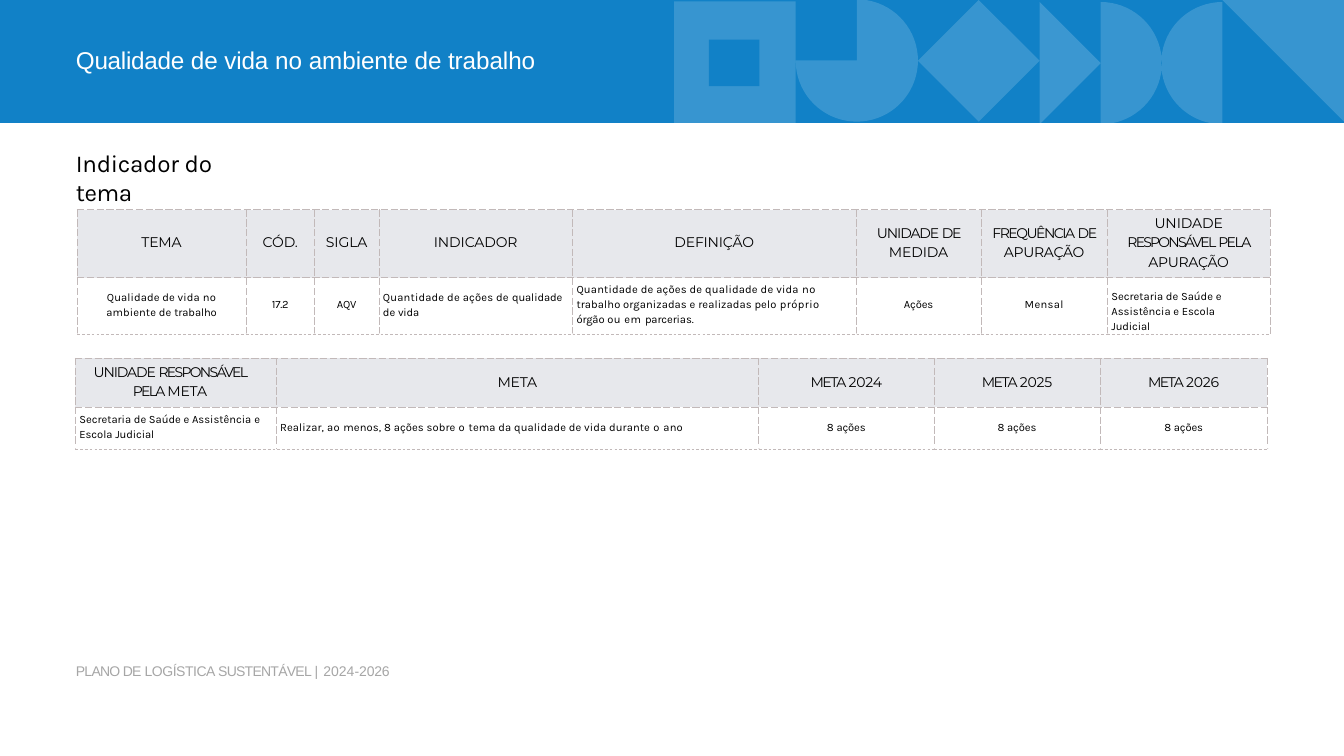
import math
from dataclasses import dataclass
from itertools import accumulate

from lxml import etree
from pptx import Presentation
from pptx.dml.color import RGBColor
from pptx.enum import dml, shapes, text
from pptx.oxml import ns
from pptx.util import Inches, Pt


@dataclass(frozen=True)
class Theme:
    blue: str = "1181C7"
    white: str = "FFFFFF"
    black: str = "000000"
    gray: str = "A6A6A6"
    header: str = "E7E8EC"
    border: str = "C2B9B9"
    title_size: int = 26
    label_size: int = 15
    body_size: int = 12
    title_font: str = "Arial"
    header_font: str = "Montserrat"
    body_font: str = "Karla"


T = Theme()
LEFT, CENTER = text.PP_ALIGN.LEFT, text.PP_ALIGN.CENTER


@dataclass(frozen=True)
class Cell:
    """Runs are (text, letter spacing in points); insets are inches."""
    runs: list
    align: int = CENTER
    left: float = 0
    right: float = 0
    top: float = 0
    bottom: float = 0.05


INDICATOR_COLS = [2.51, 1.02, 0.96, 2.88, 4.22, 1.86, 1.88, 2.42]
INDICATOR_ROWS = [
    [Cell([("TEMA", -0.2)]),
     Cell([("CÓD.", -0.2)]),
     Cell([("SIGLA", -0.1)]),
     Cell([("INDICADOR", -0.1)]),
     Cell([("DEFINIÇÃO", -0.2)]),
     Cell([("UNIDADE ", -1.2), ("DE ", -1.4), ("MEDIDA", -0.1)]),
     Cell([("FREQUÊNCIA ", -1.6), ("DE ", -1.3), ("APURAÇÃO", -0.3)]),
     Cell([("UNIDADE ", -0.1), ("RESPONSÁVEL ", -1.9), ("PELA ", -1.6),
           ("APURAÇÃO", -0.3)], left=0.1, right=0.1)],
    [Cell([("Qualidade de vida ", 0.1), ("no ", 0.3), ("ambiente de ", 0.1),
           ("trabalho", -0.1)], left=0.3, right=0.3),
     Cell([("17.2", -0.2)]),
     Cell([("AQV", -0.2)]),
     Cell([("Quantidade de ações de ", 0.2), ("qualidade ", -0.1), ("de ", 0),
           ("vida", -0.2)], LEFT, left=0.06),
     Cell([("Quantidade de ações de qualidade de vida ", 0.2), ("no ", 0.3),
           ("trabalho organizadas e realizadas pelo ", 0.1), ("próprio ", 0.5),
           ("órgão ", -0.1), ("ou em ", 0.6), ("parcerias.", -0.1)],
          LEFT, left=0.06, right=0.2),
     Cell([("Ações", -0.1)]),
     Cell([("Mensal", 0.4)]),
     Cell([("Secretaria de Saúde ", 0), ("e ", -0.5),
           ("Assistência e Escola ", 0), ("Judicial", -0.1)],
          LEFT, left=0.06, right=0.3, top=0.16, bottom=0)],
]

YEARS = ["2024", "2025", "2026"]
TARGET_COLS = [2.99, 7.18, 2.61, 2.47, 2.49]
TARGET_ROWS = [
    [Cell([("UNIDADE ", -1.2), ("RESPONSÁVEL PELA ", -1.8), ("META", -0.2)],
          left=0.2, right=0.37),
     Cell([("META", -0.2)])]
    + [Cell([("META ", -1.6), (year, -0.2)]) for year in YEARS],
    [Cell([("Secretaria de Saúde e Assistência ", 0), ("e ", -0.5),
           ("Escola ", 0), ("Judicial", -0.1)], LEFT, left=0.06, right=0.2,
          bottom=0),
     Cell([("Realizar, ", 0.1), ("ao ", 0.5), ("menos, 8 ações sobre ", 0.1),
           ("o ", 0.7), ("tema da qualidade de vida durante ", 0.1),
           ("o ", 0.7), ("ano", 0.2)], LEFT, left=0.06, bottom=0)]
    + [Cell([("8 ", 0), ("ações", -0.1)], bottom=0) for _ in YEARS],
]


def add_runs(p, runs, font, size, color):
    for words, spacing in runs:
        r = p.add_run()
        r.text = words
        r.font.name, r.font.size = font, Pt(size)
        r.font.color.rgb = RGBColor.from_string(color)
        r_pr = r._r.get_or_add_rPr()
        r_pr.set("spc", str(round(spacing * 100)))
        r_pr.set("kern", "0")


def paint(sp, color, alpha=None):
    """Fill a shape without line or shadow; alpha is opacity in percent."""
    sp.shadow.inherit = False
    sp.line.fill.background()
    sp.fill.solid()
    sp.fill.fore_color.rgb = RGBColor.from_string(color)
    if alpha:
        clr = sp._element.spPr.find(".//" + ns.qn("a:srgbClr"))
        etree.SubElement(clr, ns.qn("a:alpha"), val=str(alpha * 1000))


def add_preset(s, kind, x, y, w, h, color, alpha=None):
    sp = s.shapes.add_shape(kind, Inches(x), Inches(y), Inches(w), Inches(h))
    paint(sp, color, alpha)


def add_outline(s, contours, color, alpha=None):
    builder = None
    for contour in contours:
        pts = [(Inches(x), Inches(y)) for x, y in contour]
        if builder:
            builder.move_to(*pts[0])
        else:
            builder = s.shapes.build_freeform(*pts[0])
        builder.add_line_segments(pts[1:], close=True)
    paint(builder.convert_to_shape(), color, alpha)


def arc(cx, cy, start, end, radius=0.91, step=5):
    """Points of a clockwise arc, in degrees from the right."""
    return [(cx + radius * math.cos(math.radians(a)),
             cy + radius * math.sin(math.radians(a)))
            for a in range(start, end + 1, step)]


def add_banner(s):
    rect, diamond = shapes.MSO_SHAPE.RECTANGLE, shapes.MSO_SHAPE.DIAMOND
    add_preset(s, rect, 0, 0, 20, 1.83, T.blue)
    add_outline(s, [arc(16.38, 0.94, -90, 90), arc(18.19, 0.94, 90, 270),
                    [(18.19, 0), (20, 0), (20, 1.81)]], T.white, 16)
    add_outline(s, [[(15.47, 0.03), (16.38, 0.94), (15.47, 1.85)]], T.white, 18)
    add_preset(s, rect, 10.03, 0.02, 1.81, 1.82, T.white, 16)
    add_preset(s, rect, 10.55, 0.59, 0.75, 0.69, T.blue)
    add_outline(s, [arc(12.75, 0.9, -90, 180) + [(12.75, 0.9)]], T.white, 16)
    add_preset(s, diamond, 13.66, 0, 1.81, 1.81, T.white, 16)


def write_text(sp, box, top, runs, font, size, color):
    sp.left, sp.top, sp.width, sp.height = map(Inches, box)
    tf = sp.text_frame
    tf.word_wrap = True
    tf.auto_size = text.MSO_AUTO_SIZE.SHAPE_TO_FIT_TEXT
    tf.vertical_anchor = text.MSO_ANCHOR.TOP
    tf.margin_left, tf.margin_top = Inches(0.02), Inches(top)
    tf.margin_right = tf.margin_bottom = 0
    p = tf.paragraphs[0]
    p.alignment = LEFT
    add_runs(p, runs, font, size, color)


def add_text(s, box, *args):
    write_text(s.shapes.add_textbox(*map(Inches, box)), box, *args)


def add_borders(cell, sides):
    tc_pr = cell._tc.get_or_add_tcPr()
    for side in sides:
        ln = etree.SubElement(tc_pr, ns.qn("a:ln" + side), w=str(Pt(0.75)))
        fill = etree.SubElement(ln, ns.qn("a:solidFill"))
        etree.SubElement(fill, ns.qn("a:srgbClr"), val=T.border)
        etree.SubElement(ln, ns.qn("a:prstDash"), val="dash")


def fill_cell(cell, content, is_header):
    add_borders(cell, "LRTB" if is_header else "LRT")
    if is_header:
        cell.fill.solid()
        cell.fill.fore_color.rgb = RGBColor.from_string(T.header)
    else:
        cell.fill.background()
    cell.vertical_anchor = text.MSO_ANCHOR.MIDDLE
    cell.margin_left, cell.margin_right = Inches(content.left), Inches(content.right)
    cell.margin_top, cell.margin_bottom = Inches(content.top), Inches(content.bottom)
    p = cell.text_frame.paragraphs[0]
    p.alignment = content.align
    p.line_spacing = 1.12 if is_header else 1.15
    font, size = ((T.header_font, T.label_size) if is_header
                  else (T.body_font, T.body_size))
    add_runs(p, content.runs, font, size, T.black)


def add_grid(s, x, y, cols, heights, rows):
    table = s.shapes.add_table(len(rows), len(cols), Inches(x), Inches(y),
                               Inches(sum(cols)), Inches(sum(heights))).table
    table.first_row = table.horz_banding = False
    for col, width in zip(table.columns, cols):
        col.width = Inches(width)
    for i, (height, row) in enumerate(zip(heights, rows)):
        table.rows[i].height = Inches(height)
        for j, content in enumerate(row):
            fill_cell(table.cell(i, j), content, i == 0)


def add_closing_line(s, x, y, cols, stops):
    """Close a grid with a corner dot per column edge and dashes between stops."""
    edges = list(accumulate(cols, initial=x))
    d = 0.01
    add_outline(s, [[(e, y - d), (e + d, y - d), (e + d, y), (e, y)]
                    for e in edges], T.border)
    for start, end in zip(stops, stops[1:]):
        line = s.shapes.add_connector(
            shapes.MSO_CONNECTOR.STRAIGHT, Inches(edges[start]), Inches(y),
            Inches(edges[end]), Inches(y))
        line.line.color.rgb = RGBColor.from_string(T.border)
        line.line.width = Pt(0.75)
        line.line.dash_style = dml.MSO_LINE.DASH
        etree.SubElement(line._element.spPr, ns.qn("a:effectLst"))


def main():
    prs = Presentation()
    prs.slide_width, prs.slide_height = Inches(20), Inches(11.25)
    s = prs.slides.add_slide(prs.slide_layouts[5])
    add_banner(s)
    add_grid(s, 1.15, 3.12, INDICATOR_COLS, [1.01, 0.8], INDICATOR_ROWS)
    add_closing_line(s, 1.15, 4.97, INDICATOR_COLS, [0, 4, 6, 7, 8])
    add_text(s, (1.11, 2.2, 2.87, 0.46), 0.01,
             [("Indicador ", -0.3), ("do ", 0), ("tema", -0.5)],
             T.body_font, T.title_size, T.black)
    add_grid(s, 1.12, 5.33, TARGET_COLS, [0.73, 0.57], TARGET_ROWS)
    add_closing_line(s, 1.12, 6.68, TARGET_COLS, [0, 3, 4, 5])
    add_text(s, (1.11, 9.84, 4.77, 0.28), 0.02,
             [("PLANO DE ", -0.8), ("LOGÍSTICA ", -0.5), ("SUSTENTÁVEL ", -0.8),
              ("| ", 0.7), ("2024-", 0), ("2026", -0.2)],
             T.title_font, T.label_size, T.gray)
    title = s.shapes.title
    s.shapes._spTree.append(title._element)  # in front of the banner
    write_text(title, (1.11, 0.38, 8.29, 1.79), 0.3,
               [("Qualidade ", -0.3), ("de ", -0.1), ("vida ", -0.2), ("no ", 0),
                ("ambiente de trabalho", -0.1)],
               T.title_font, T.title_size, T.white)
    prs.save("out.pptx")


if __name__ == "__main__":
    main()
